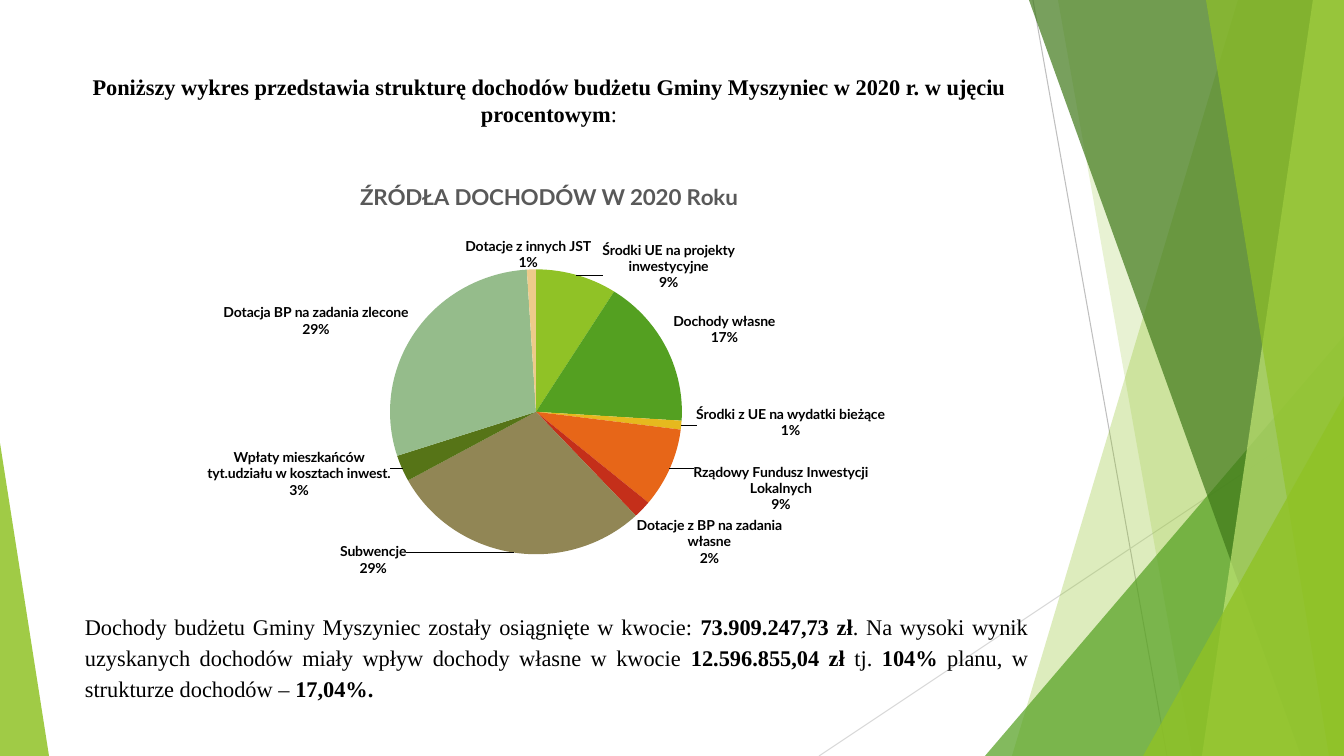
from lxml import etree
from pptx import Presentation
from pptx.chart.data import CategoryChartData
from pptx.dml.color import RGBColor
from pptx.enum import chart as kinds, shapes, text
from pptx.oxml import parse_xml
from pptx.oxml.ns import nsdecls, qn
from pptx.util import Pt

PX = 914400 / 100.8
WIDE, HIGH = 1344, 756
SERIF, SANS = "Times New Roman", "Lato"

# Content: text as (words, bold)
HEAD = [
    ("Poniższy wykres przedstawia strukturę dochodów budżetu Gminy Myszyniec "
     "w 2020 r. w ujęciu procentowym", True),
    (":", False),
]
BODY = [
    ("Dochody budżetu Gminy Myszyniec zostały osiągnięte w kwocie: ", False),
    ("73.909.247,73 zł", True),
    (". Na wysoki wynik uzyskanych dochodów miały wpływ dochody własne w kwocie ", False),
    ("12.596.855,04 zł", True),
    (" tj. ", False),
    ("104%", True),
    (" planu, w strukturze dochodów – ", False),
    ("17,04%.", True),
]
TITLE = "ŹRÓDŁA DOCHODÓW W 2020 Roku"
# Slices: name, percent, colour, label shift in px
SLICES = [
    ("Środki UE na projekty inwestycyjne", 9, "90C226", (24, 22)),
    ("Dochody własne", 17, "54A021", (2, 1)),
    ("Środki z UE na wydatki bieżące", 1, "E6B91E", (9, -20)),
    ("Rządowy Fundusz Inwestycji Lokalnych", 9, "E76618", (18, -7)),
    ("Dotacje z BP na zadania własne", 2, "C42F1A", (-10, 4)),
    ("Subwencje", 29, "918655", (-106, -15)),
    ("Wpłaty mieszkańców tyt.udziału w kosztach inwest.", 3, "567417", (-6, -22)),
    ("Dotacja BP na zadania zlecone", 29, "95BC8B", (-2, 9)),
    ("Dotacje z innych JST", 1, "EDCB8B", (-3, 7)),
]
# Backdrop: lines as ends, colour; panes as corners, colour, opacity %
LINES = [((1033, 0), (1167, HIGH), "BFBFBF"), ((WIDE, 406), (819, HIGH), "D9D9D9")]
PANES = [
    ([(1238, 0), (WIDE, 0), (WIDE, HIGH), (1012, HIGH)], "90C226", 30),
    ([(1058, 0), (WIDE, 0), (WIDE, HIGH), (1192, HIGH)], "90C226", 20),
    ([(WIDE, 336), (WIDE, HIGH), (985, HIGH)], "54A021", 72),
    ([(1029, 0), (WIDE, 0), (WIDE, HIGH), (1301, HIGH)], "3F7819", 70),
    ([(1313, 0), (WIDE, 0), (WIDE, HIGH), (1202, HIGH)], "C0E474", 70),
    ([(1206, 0), (WIDE, 0), (WIDE, HIGH), (1329, HIGH)], "90C226", 65),
    ([(WIDE, 396), (WIDE, HIGH), (1143, HIGH)], "90C226", 80),
    ([(0, 443), (49, HIGH), (0, HIGH)], "90C226", 85),
]
CHART = (75, 164, 948, 427)
PIE = (390, 272, 292, 292)


def emu(*vals):
    return [round(v * PX) for v in vals]


def paint(fill, tone):
    fill.solid()
    fill.fore_color.rgb = RGBColor.from_string(tone)


def style(font, name, size, tone, bold):
    for key, val in {"name": name, "size": Pt(size), "bold": bold}.items():
        setattr(font, key, val)
    font.color.rgb = RGBColor.from_string(tone)


def write(slide, box, runs, form):
    frame = slide.shapes.add_textbox(*emu(*box)).text_frame
    frame.word_wrap = True
    para = frame.paragraphs[0]
    for key, val in form.items():
        setattr(para, key, val)
    for words, bold in runs:
        run = para.add_run()
        run.text = words
        style(run.font, SERIF, 16, "000000", bold)


def frac(box):
    """Manual layout parts of a px box inside the chart."""
    left, top, wide, high = CHART
    x, y, w, h = box
    return {"x": (x - left) / wide, "y": (y - top) / high, "w": w / wide, "h": h / high}


def layout(parts, head=""):
    tags = "".join(f'<c:{k} val="{v:.4f}"/>' for k, v in parts.items())
    return parse_xml(f'<c:layout {nsdecls("c")}><c:manualLayout>{head}{tags}'
                     "</c:manualLayout></c:layout>")


def backdrop(slide):
    for start, end, tone in LINES:
        line = slide.shapes.add_connector(
            shapes.MSO_CONNECTOR.STRAIGHT, *emu(*start, *end))
        line.line.width = Pt(0.75)
        line.line.color.rgb = RGBColor.from_string(tone)
        etree.SubElement(line.element.spPr, qn("a:effectLst"))
    for dots, tone, alpha in PANES:
        form = slide.shapes.build_freeform(*dots[0], scale=PX)
        form.add_line_segments(dots[1:], close=True)
        pane = form.convert_to_shape()
        pane.shadow.inherit = False
        pane.line.fill.background()
        paint(pane.fill, tone)
        tint = pane.element.spPr.find(".//" + qn("a:srgbClr"))
        etree.SubElement(tint, qn("a:alpha")).set("val", str(alpha * 1000))


def pie(slide):
    data = CategoryChartData()
    data.categories = [name for name, *_ in SLICES]
    data.add_series("Dochody", [val for _, val, *_ in SLICES])
    chart = slide.shapes.add_chart(
        kinds.XL_CHART_TYPE.PIE, *emu(*CHART), data).chart
    chart.has_legend = False
    style(chart.font, SANS, 10, "000000", True)
    chart.has_title = True
    run = chart.chart_title.text_frame.paragraphs[0].add_run()
    run.text = TITLE
    style(run.font, SANS, 16, "595959", True)

    # Plot place
    area = chart.element.find(".//" + qn("c:plotArea"))
    for old in area.findall(qn("c:layout")):
        area.remove(old)
    modes = ('<c:layoutTarget val="inner"/><c:xMode val="edge"/>'
             '<c:yMode val="edge"/>')
    area.insert(0, layout(frac(PIE), modes))

    # Slices and labels
    plot = chart.plots[0]
    plot.vary_by_categories = True
    flags = {"c:showVal": "0", "c:showCatName": "1", "c:showPercent": "1"}
    for i, (_, _, tone, shift) in enumerate(SLICES):
        point = plot.series[0].points[i]
        paint(point.format.fill, tone)
        point.format.line.fill.background()
        style(point.data_label.font, SANS, 10, "000000", True)
        point.data_label.position = kinds.XL_LABEL_POSITION.OUTSIDE_END
        label = area.findall(".//" + qn("c:dLbl"))[i]
        for tag, val in flags.items():
            label.find(qn(tag)).set("val", val)
        etree.SubElement(label, qn("c:separator")).text = "\n"
        dx, dy = shift
        label.insert(1, layout({"x": dx / CHART[2], "y": dy / CHART[3]}))


def main():
    deck = Presentation()
    deck.slide_width, deck.slide_height = emu(WIDE, HIGH)
    slide = deck.slides.add_slide(deck.slide_layouts[6])
    backdrop(slide)
    write(slide, (75, 68, 948, 85), HEAD, {"alignment": text.PP_ALIGN.CENTER})
    pie(slide)
    write(slide, (75, 604, 963, 102), BODY, {
        "alignment": text.PP_ALIGN.JUSTIFY, "line_spacing": 1.15,
        "space_after": Pt(8)})
    deck.save("out.pptx")


if __name__ == "__main__":
    main()
